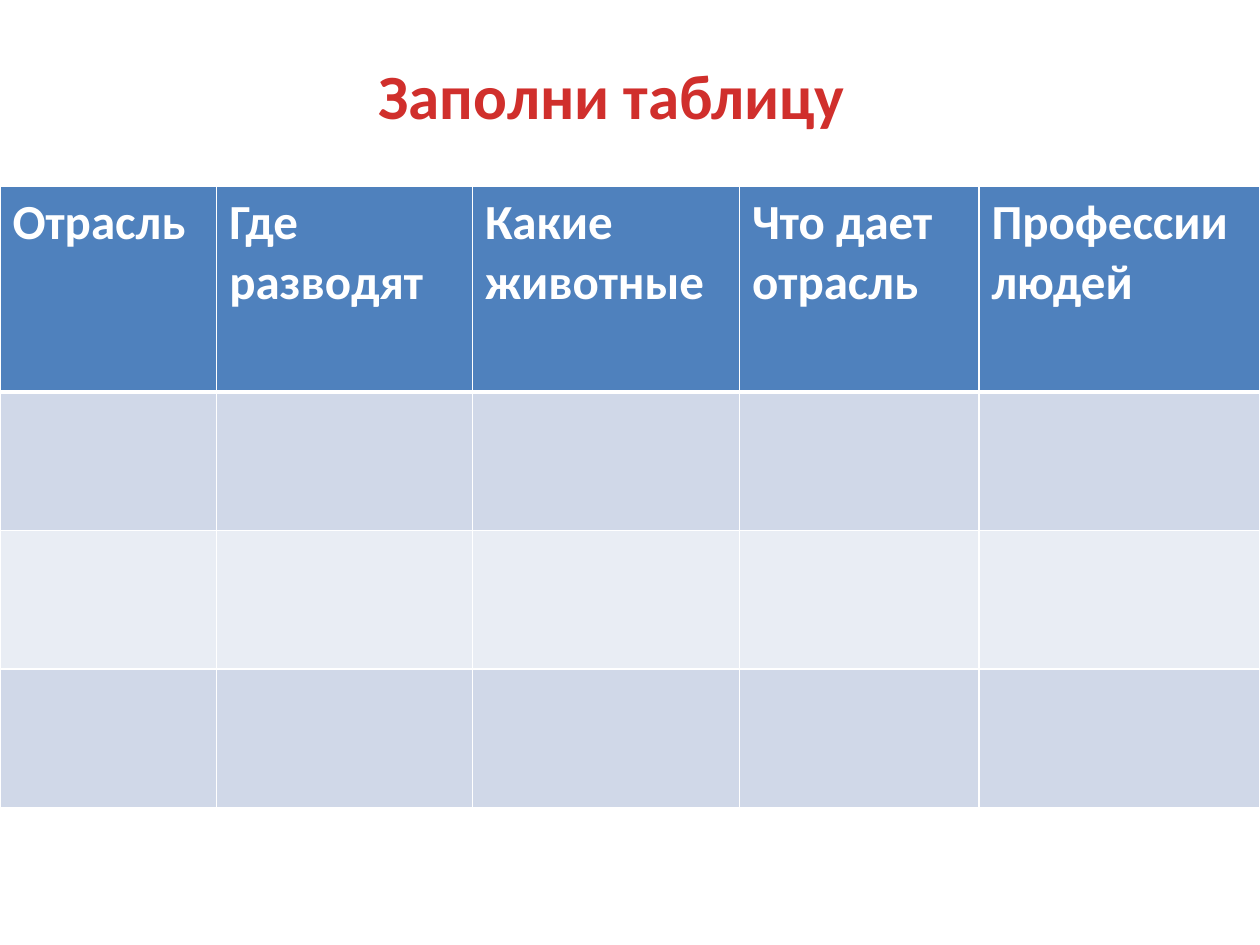
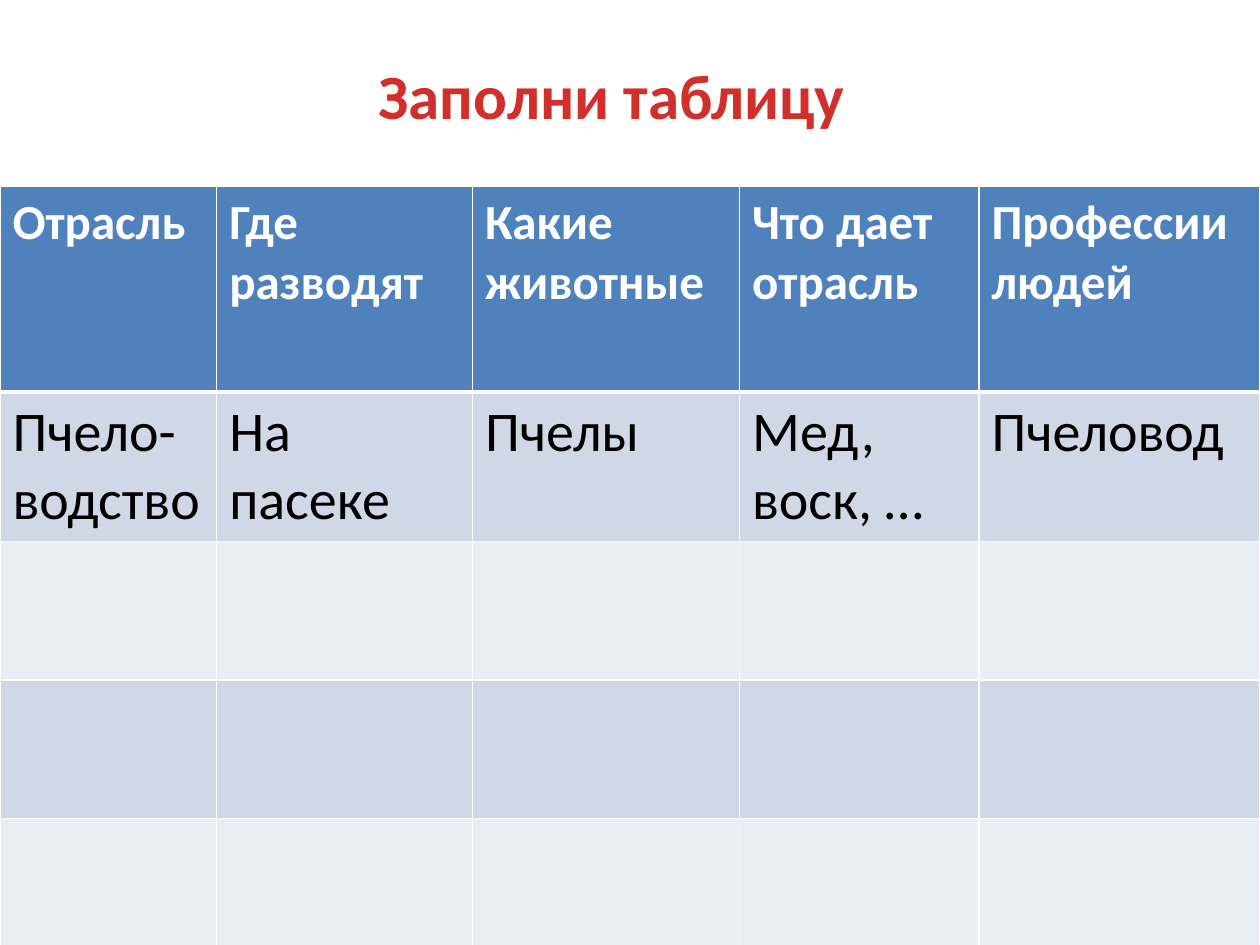
"""Build two slides with a table about branches of animal farming."""
from pptx import Presentation
from pptx.dml.color import RGBColor
from pptx.enum.text import MSO_ANCHOR, PP_ALIGN
from pptx.oxml import parse_xml
from pptx.oxml.ns import nsdecls
from pptx.util import Inches, Pt

RED = RGBColor(0xD0, 0x2F, 0x2C)
BLUE = RGBColor(0x4F, 0x81, 0xBD)
BAND_DARK = RGBColor(0xD0, 0xD8, 0xE8)
BAND_LIGHT = RGBColor(0xE9, 0xED, 0xF4)
WHITE = RGBColor(0xFF, 0xFF, 0xFF)
BLACK = RGBColor(0x00, 0x00, 0x00)
FONT = "Calibri"

TITLE = "Заполни таблицу "
HEADERS = ["Отрасль", "Где разводят", "Какие животные", "Что дает отрасль", "Профессии людей"]
BEEKEEPING = ["Пчело-водство", "На пасеке", "Пчелы", "Мед, воск, …", "Пчеловод"]
EMPTY = [""] * len(HEADERS)
COLUMN_WIDTHS = [1.72, 2.03, 2.12, 1.9, 2.23]
HEADER_HEIGHT = 1.63
ROW_HEIGHT = 1.1

SLIDE_ROWS = [
    [HEADERS, EMPTY, EMPTY, EMPTY],
    [HEADERS, BEEKEEPING, EMPTY, EMPTY, EMPTY],
]


def add_text(paragraph, text, size, color, bold):
    run = paragraph.add_run()
    run.text = text
    run.font.name = FONT
    run.font.size = Pt(size)
    run.font.bold = bold
    run.font.color.rgb = color


def add_border(cell, side, points):
    cell._tc.get_or_add_tcPr().append(parse_xml(
        f'<a:ln{side} {nsdecls("a")} w="{Pt(points)}"><a:solidFill>'
        f'<a:srgbClr val="{WHITE}"/></a:solidFill></a:ln{side}>'))


presentation = Presentation()
presentation.slide_width = Inches(10)
presentation.slide_height = Inches(7.5)
title_only = presentation.slide_layouts[5]

for rows in SLIDE_ROWS:
    slide = presentation.slides.add_slide(title_only)

    title = slide.shapes.title
    title.left, title.top = Inches(2.89), Inches(0.39)
    title.width, title.height = Inches(4.04), Inches(0.71)
    title.text_frame.word_wrap = False
    title.text_frame.vertical_anchor = MSO_ANCHOR.MIDDLE
    title_paragraph = title.text_frame.paragraphs[0]
    title_paragraph.alignment = PP_ALIGN.CENTER
    add_text(title_paragraph, TITLE, 36, RED, True)

    table_height = HEADER_HEIGHT + ROW_HEIGHT * (len(rows) - 1)
    table = slide.shapes.add_table(len(rows), len(HEADERS), Inches(0), Inches(1.48),
                                   Inches(10), Inches(table_height)).table
    for column, width in zip(table.columns, COLUMN_WIDTHS):
        column.width = Inches(width)

    for row_index, texts in enumerate(rows):
        is_header = row_index == 0
        table.rows[row_index].height = Inches(HEADER_HEIGHT if is_header else ROW_HEIGHT)
        band = BAND_DARK if row_index % 2 else BAND_LIGHT
        for column_index, text in enumerate(texts):
            cell = table.cell(row_index, column_index)
            for side in "LRTB":
                header_edge = (row_index, side) in [(0, "B"), (1, "T")]
                add_border(cell, side, 3 if header_edge else 1)
            cell.fill.solid()
            cell.fill.fore_color.rgb = BLUE if is_header else band
            if text:
                add_text(cell.text_frame.paragraphs[0], text, 28 if is_header else 32,
                         WHITE if is_header else BLACK, is_header)

presentation.save("out.pptx")
